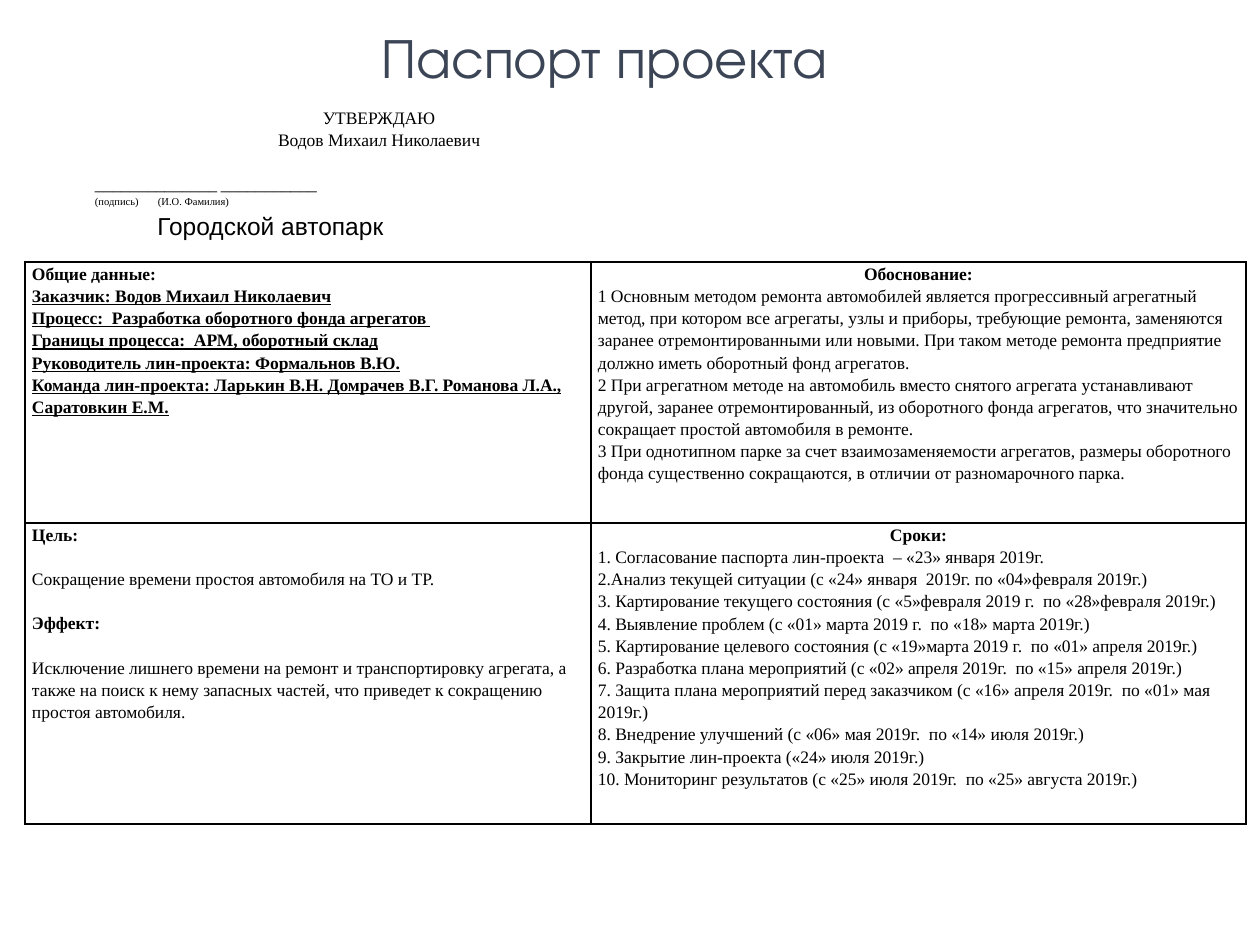
from lxml.etree import SubElement
from pptx import Presentation
from pptx.dml.color import RGBColor
from pptx.enum.text import MSO_ANCHOR, PP_ALIGN
from pptx.oxml import parse_xml
from pptx.oxml.ns import nsdecls, qn
from pptx.util import Pt

EMU_PER_PX = 914400 // 126
PLAIN_TABLE_STYLE = "{2D5ABB26-0587-4C30-8999-92F81FD0307C}"
BLANK_LINE = 12.6


def px(length):
    return length * EMU_PER_PX


def color(value):
    return RGBColor.from_string(value)


def line(text, **style):
    return text, style


def bold(text, **style):
    return line(text, bold=True, **style)


class PassportSlide:
    body_font = "Times New Roman"
    ink = "000000"

    def __init__(self, presentation):
        self.slide = presentation.slides.add_slide(presentation.slide_layouts[6])

    def style_paragraph(self, paragraph, size, font, ink, bold=False, underline=False):
        for run in paragraph.runs:
            run.font.size = Pt(size)
            run.font.name = font
            run.font.bold = bold
            run.font.underline = underline
            run.font.color.rgb = color(ink)

    def text(self, box, text, size, font, ink, align, anchor):
        shape = self.slide.shapes.add_textbox(*map(px, box))
        frame = shape.text_frame
        frame.word_wrap = True
        frame.vertical_anchor = anchor
        frame.text = text
        paragraph = frame.paragraphs[0]
        paragraph.alignment = align
        self.style_paragraph(paragraph, size, font, ink)

    def table(self, left, top, columns, rows):
        frame = self.slide.shapes.add_table(
            len(rows), len(columns), px(left), px(top), px(sum(columns)), px(sum(rows)))
        table = frame.table
        table.first_row = table.horz_banding = False
        table._tbl.tblPr.find(qn("a:tableStyleId")).text = PLAIN_TABLE_STYLE
        for column, width in zip(table.columns, columns):
            column.width = px(width)
        for row, height in zip(table.rows, rows):
            row.height = px(height)
        return table

    def fill_cell(self, cell, lines):
        cell.text = "\n".join(text for text, style in lines)
        for paragraph, (text, style) in zip(cell.text_frame.paragraphs, lines):
            paragraph.line_spacing = 1.15
            paragraph.alignment = style.get("align", PP_ALIGN.LEFT)
            if "before" in style:
                paragraph.space_before = Pt(style["before"])
            properties = paragraph._p.get_or_add_pPr()
            properties.set("indent", str(px(style.get("indent", 0))))
            if "tabs" in style:
                stops = SubElement(properties, qn("a:tabLst"))
                for position in style["tabs"]:
                    SubElement(stops, qn("a:tab"), pos=str(px(position)), algn="l")
            self.style_paragraph(paragraph, style.get("size", 10), self.body_font, self.ink,
                                 style.get("bold", False), style.get("underline", False))

    def finish_cell(self, cell, sides):
        cell.margin_left = cell.margin_right = px(7)
        cell.margin_top = cell.margin_bottom = 0
        cell.fill.background()
        properties = cell._tc.get_or_add_tcPr()
        for index, side in enumerate(sides):
            properties.insert(index, parse_xml(
                f'<a:ln{side} {nsdecls("a")} w="{Pt(1)}"><a:solidFill>'
                f'<a:srgbClr val="{self.ink}"/></a:solidFill></a:ln{side}>'))


CENTER = PP_ALIGN.CENTER

APPROVAL = [
    line("УТВЕРЖДАЮ", align=CENTER, indent=63),
    line("Водов Михаил Николаевич", align=CENTER, indent=63),
    line("\t______________\t___________", tabs=(232, 367), before=BLANK_LINE),
    line("\t(подпись)\t(И.О. Фамилия)", tabs=(42, 157), size=6),
]
GENERAL = [bold("Общие данные:")] + [bold(text, underline=True) for text in (
    "Заказчик: Водов Михаил Николаевич",
    "Процесс:  Разработка оборотного фонда агрегатов ",
    "Границы процесса:  АРМ, оборотный склад",
    "Руководитель лин-проекта: Формальнов В.Ю.",
    "Команда лин-проекта: Ларькин В.Н. Домрачев В.Г. Романова Л.А.,",
    "Саратовкин Е.М.",
)]
REASONS = [bold("Обоснование:", align=CENTER)] + [line(text) for text in (
    "1 Основным методом ремонта автомобилей является прогрессивный агрегатный метод, "
    "при котором все агрегаты, узлы и приборы, требующие ремонта, заменяются заранее "
    "отремонтированными или новыми. При таком методе ремонта предприятие должно иметь "
    "оборотный фонд агрегатов.",
    "2 При агрегатном методе на автомобиль вместо снятого агрегата устанавливают другой, "
    "заранее отремонтированный, из оборотного фонда агрегатов, что значительно сокращает "
    "простой автомобиля в ремонте.",
    "3 При однотипном парке за счет взаимозаменяемости агрегатов, размеры оборотного "
    "фонда существенно сокращаются, в отличии от разномарочного парка.",
)]
GOAL = [
    bold("Цель:"),
    line("Сокращение времени простоя автомобиля на ТО и ТР.", before=BLANK_LINE),
    bold("Эффект:", before=BLANK_LINE),
    line("Исключение лишнего времени на ремонт и транспортировку агрегата, а также на поиск "
         "к нему запасных частей, что приведет к сокращению простоя автомобиля.",
         before=BLANK_LINE),
]
SCHEDULE = [bold("Сроки:", align=CENTER)] + [line(text) for text in (
    "1. Согласование паспорта лин-проекта  – «23» января 2019г.",
    "2.Анализ текущей ситуации (с «24» января  2019г. по «04»февраля 2019г.)",
    "3. Картирование текущего состояния (с «5»февраля 2019 г.  по «28»февраля 2019г.)",
    "4. Выявление проблем (с «01» марта 2019 г.  по «18» марта 2019г.)",
    "5. Картирование целевого состояния (с «19»марта 2019 г.  по «01» апреля 2019г.)",
    "6. Разработка плана мероприятий (с «02» апреля 2019г.  по «15» апреля 2019г.)",
    "7. Защита плана мероприятий перед заказчиком (с «16» апреля 2019г.  по «01» мая 2019г.)",
    "8. Внедрение улучшений (с «06» мая 2019г.  по «14» июля 2019г.)",
    "9. Закрытие лин-проекта («24» июля 2019г.)",
    "10. Мониторинг результатов (с «25» июля 2019г.  по «25» августа 2019г.)",
)]


def main():
    presentation = Presentation()
    presentation.slide_width, presentation.slide_height = px(1260), px(945)
    passport = PassportSlide(presentation)

    # Title
    passport.text((364, 16, 481, 131), "Паспорт проекта", 32, "TeX Gyre Adventor",
                  "3B4555", CENTER, MSO_ANCHOR.TOP)

    # Project table: approval row above two framed rows
    table = passport.table(25, 106, (566, 79, 39, 537), (156, 261, 301))
    table.cell(0, 0).merge(table.cell(0, 1))
    for row in (1, 2):
        table.cell(row, 1).merge(table.cell(row, 3))
    contents = {(0, 0): APPROVAL, (1, 0): GENERAL, (1, 1): REASONS,
                (2, 0): GOAL, (2, 1): SCHEDULE}
    for position, lines in contents.items():
        passport.fill_cell(table.cell(*position), lines)

    # Cell frames
    framed_sides = ("LRTB", "LRTB", "TB", "RTB")
    for row in range(3):
        for column, sides in enumerate(framed_sides):
            passport.finish_cell(table.cell(row, column), sides if row else "B")

    # Organisation name
    passport.text((145, 204, 600, 44), "Городской автопарк", 14, "Arial",
                  passport.ink, PP_ALIGN.LEFT, MSO_ANCHOR.MIDDLE)

    presentation.save("out.pptx")


if __name__ == "__main__":
    main()
